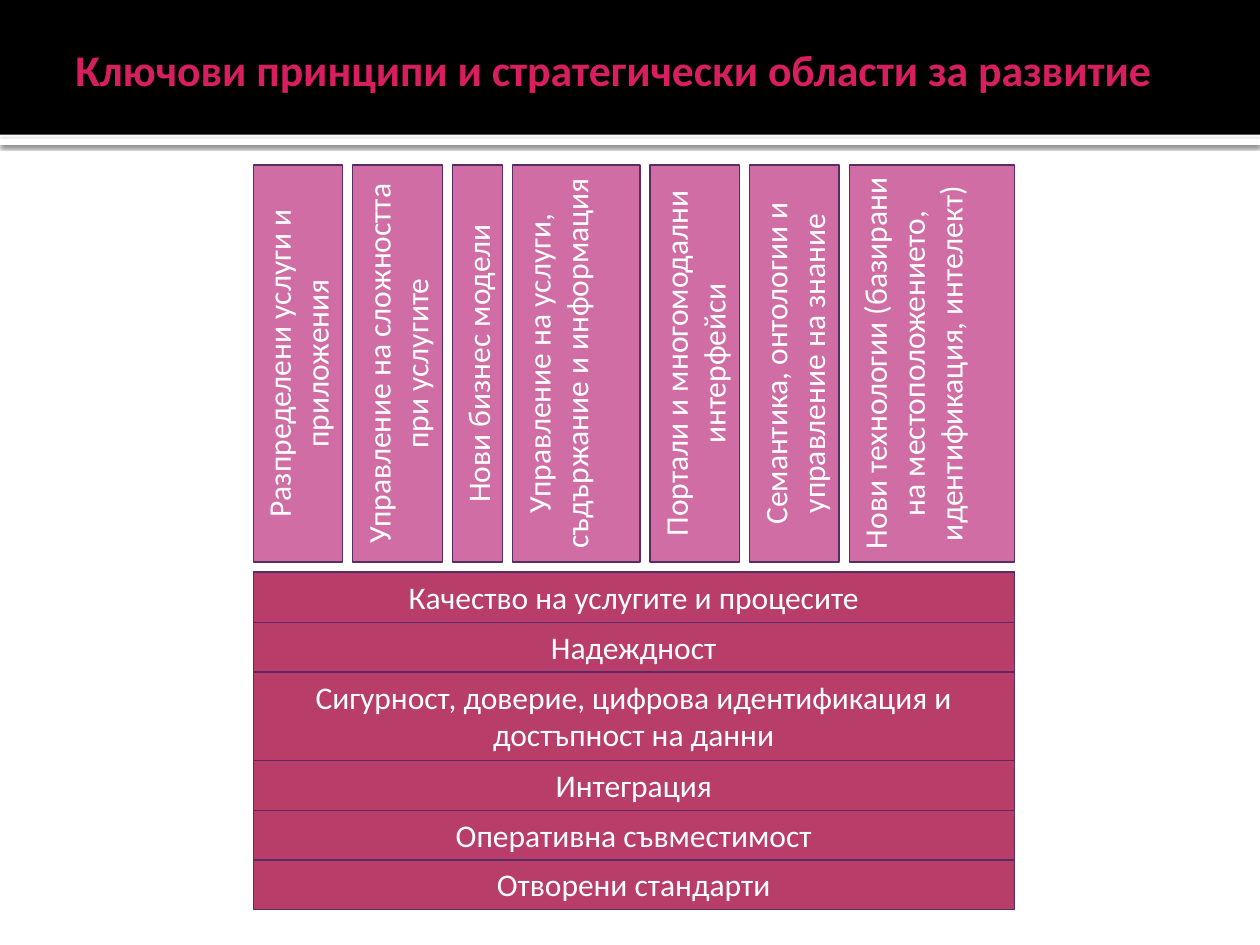
from dataclasses import dataclass

from lxml import etree
from pptx import Presentation
from pptx.dml.color import RGBColor
from pptx.enum import shapes, text
from pptx.oxml import ns
from pptx.util import Inches, Pt

WHITE = RGBColor(0xFF, 0xFF, 0xFF)
BLACK = RGBColor(0x00, 0x00, 0x00)
TITLE_PINK = RGBColor(0xD7, 0x1E, 0x5F)
PRINCIPLE_RED = RGBColor(0xB8, 0x3D, 0x68)
AREA_PINK = RGBColor(0xCF, 0x6D, 0xA4)
BORDER = RGBColor(0x5A, 0x2C, 0x64)
FONT = "Calibri"


@dataclass(frozen=True)
class Block:
    label: str
    thickness: float


AREAS = [
    Block("Разпределени услуги и приложения", 0.71),
    Block("Управление на сложността при услугите", 0.71),
    Block("Нови бизнес модели", 0.4),
    Block("Управление на услуги, съдържание и информация", 1.01),
    Block("Портали и многомодални интерфейси", 0.71),
    Block("Семантика, онтологии и управление на знание", 0.71),
    Block("Нови технологии (базирани на местоположението, "
          "идентификация, интелект)", 1.31),
]
PRINCIPLES = [
    Block("Качество на услугите и процесите", 0.4),
    Block("Надеждност", 0.4),
    Block("Сигурност, доверие, цифрова идентификация и достъпност на данни", 0.71),
    Block("Интеграция", 0.4),
    Block("Оперативна съвместимост", 0.4),
    Block("Отворени стандарти", 0.4),
]
LEFT, RIGHT = 2.01, 8.05
AREA_TOP, AREA_LENGTH = 1.31, 3.15
PRINCIPLE_TOP, PRINCIPLE_BOTTOM = 4.54, 7.22


def spread(blocks: list[Block], start: float, end: float) -> list[float]:
    """Start of each block when all are evenly spaced from start to end."""
    total = sum(block.thickness for block in blocks)
    gap = (end - start - total) / (len(blocks) - 1)
    starts = []
    for block in blocks:
        starts.append(start)
        start += block.thickness + gap
    return starts


def add_rectangle(slide, left: float, top: float, width: float, height: float,
                  color: RGBColor):
    shape = slide.shapes.add_shape(
        shapes.MSO_SHAPE.RECTANGLE,
        Inches(left), Inches(top), Inches(width), Inches(height))
    shape.shadow.inherit = False
    shape.fill.solid()
    shape.fill.fore_color.rgb = color
    shape.line.fill.background()
    return shape


def format_font(font, size: float, color: RGBColor, bold: bool = False) -> None:
    font.name = FONT
    font.size = Pt(size)
    font.bold = bold
    font.color.rgb = color


def add_label_box(slide, label: str, left: float, top: float, width: float,
                  height: float, color: RGBColor, rotation: float = 0) -> None:
    shape = add_rectangle(slide, left, top, width, height, color)
    shape.rotation = rotation
    shape.line.color.rgb = BORDER
    shape.line.width = Pt(0.75)
    frame = shape.text_frame
    frame.text = label
    frame.word_wrap = True
    frame.auto_size = text.MSO_AUTO_SIZE.SHAPE_TO_FIT_TEXT
    frame.vertical_anchor = text.MSO_ANCHOR.TOP
    paragraph = frame.paragraphs[0]
    paragraph.alignment = text.PP_ALIGN.CENTER
    format_font(paragraph.runs[0].font, 18, WHITE)


def add_drop_shadow(shape) -> None:
    effects = shape._element.spPr.find(ns.qn("a:effectLst"))
    shadow = etree.SubElement(
        effects, ns.qn("a:outerShdw"), blurRad=str(Pt(2.5)), dist=str(Pt(0.8)),
        dir="5400000", algn="tl", rotWithShape="0")
    color = etree.SubElement(shadow, ns.qn("a:srgbClr"), val="000000")
    etree.SubElement(color, ns.qn("a:alpha"), val="60000")


def add_header(slide) -> None:
    add_drop_shadow(add_rectangle(slide, 0, 1.1, 10, 0.05, WHITE))
    add_rectangle(slide, 0, 0, 10, 1.07, BLACK)

    title = slide.shapes.add_textbox(
        Inches(0.5), Inches(0.17), Inches(9), Inches(0.75))
    frame = title.text_frame
    frame.text = "Ключови принципи и стратегически области за развитие"
    frame.word_wrap = True
    frame.vertical_anchor = text.MSO_ANCHOR.MIDDLE
    frame.margin_right = Inches(0.05)
    format_font(frame.paragraphs[0].runs[0].font, 25, TITLE_PINK, bold=True)


def add_principles(slide) -> None:
    tops = spread(PRINCIPLES, PRINCIPLE_TOP, PRINCIPLE_BOTTOM)
    for block, top in reversed(list(zip(PRINCIPLES, tops))):
        add_label_box(slide, block.label, LEFT, top, RIGHT - LEFT,
                      block.thickness, PRINCIPLE_RED)


def add_areas(slide) -> None:
    for block, left in zip(AREAS, spread(AREAS, LEFT, RIGHT)):
        # A quarter turn swaps the sides around the column's centre
        shift = (AREA_LENGTH - block.thickness) / 2
        add_label_box(slide, block.label, left - shift, AREA_TOP + shift,
                      AREA_LENGTH, block.thickness, AREA_PINK, rotation=270)


def main() -> None:
    presentation = Presentation()
    presentation.slide_width = Inches(10)
    presentation.slide_height = Inches(7.5)
    slide = presentation.slides.add_slide(presentation.slide_layouts[6])

    # Title band, horizontal principles, vertical strategic areas
    add_header(slide)
    add_principles(slide)
    add_areas(slide)
    presentation.save("out.pptx")


if __name__ == "__main__":
    main()
